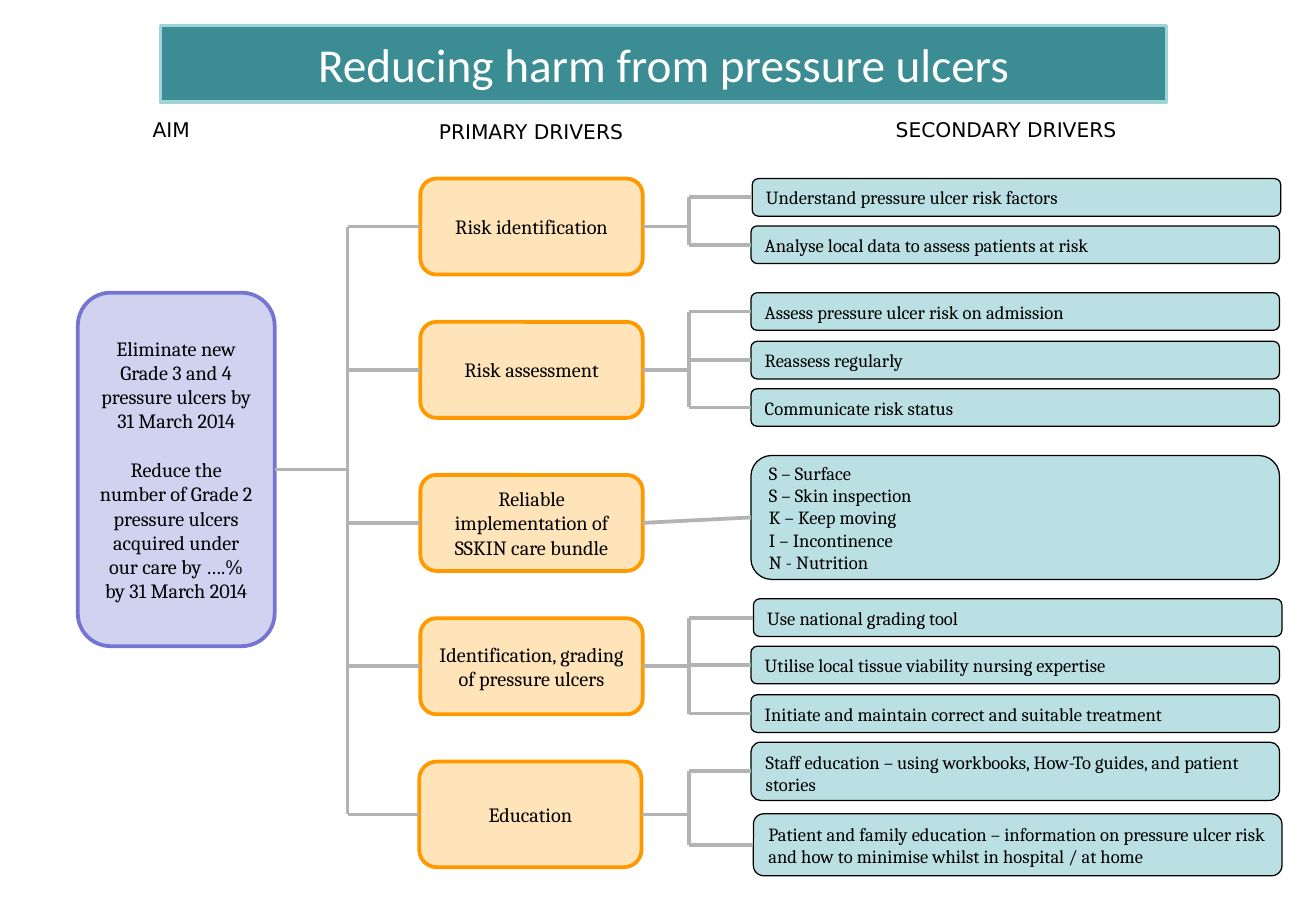
"""Build a driver diagram slide on reducing harm from pressure ulcers."""
import lxml.etree
import pptx
import pptx.dml.color
import pptx.enum.shapes
import pptx.enum.text
import pptx.oxml.ns
import pptx.util

Inches = pptx.util.Inches
Pt = pptx.util.Pt
ALIGN = pptx.enum.text.PP_ALIGN
ANCHOR = pptx.enum.text.MSO_ANCHOR
AUTO_SIZE = pptx.enum.text.MSO_AUTO_SIZE

TITLE = "Reducing harm from pressure ulcers"
HEADINGS = [
    ("AIM", 0.64, 0.92, 1.54),
    ("PRIMARY DRIVERS", 3.28, 0.93, 2.18),
    ("SECONDARY DRIVERS", 6.7, 0.92, 3.16),
]
AIMS = [
    "Eliminate new Grade 3 and 4 pressure ulcers by 31 March 2014",
    "Reduce the number of Grade 2 pressure ulcers acquired under our care by ….% by 31 March 2014",
]
DRIVERS = [
    ("Risk identification", 3.46, 1.47, 0.79, [
        (6.19, 1.47, 0.31, ["Understand pressure ulcer risk factors"]),
        (6.18, 1.86, 0.31, ["Analyse local data to assess patients at risk"]),
    ]),
    ("Risk assessment", 3.46, 2.65, 0.79, [
        (6.18, 2.41, 0.31, ["Assess pressure ulcer risk on admission"]),
        (6.18, 2.81, 0.31, ["Reassess regularly"]),
        (6.18, 3.2, 0.31, ["Communicate risk status"]),
    ]),
    ("Reliable implementation of SSKIN care bundle", 3.46, 3.91, 0.79, [
        (6.18, 3.75, 1.02, ["S – Surface", "S – Skin inspection", "K – Keep moving",
                            "I – Incontinence", "N - Nutrition"]),
    ]),
    ("Identification, grading of pressure ulcers", 3.46, 5.09, 0.79, [
        (6.2, 4.93, 0.31, ["Use national grading tool"]),
        (6.18, 5.32, 0.31, ["Utilise local tissue viability nursing expertise"]),
        (6.18, 5.72, 0.31, ["Initiate and maintain correct and suitable treatment"]),
    ]),
    ("Education", 3.45, 6.27, 0.87, [
        (6.18, 6.11, 0.48,
         ["Staff education – using workbooks, How-To guides, and patient stories"]),
        (6.2, 6.7, 0.51, ["Patient and family education – information on pressure ulcer risk "
                          "and how to minimise whilst in hospital / at home"]),
    ]),
]
COLOURS = {
    "title_fill": "3C8C93", "title_line": "9ED3D7",
    "aim_fill": "D1D1F0", "aim_line": "7575D1",
    "primary_fill": "FFE3B9", "primary_line": "FF9900",
    "secondary_fill": "BBE0E3", "secondary_line": "000000",
    "connector": "B3B3B3", "text": "000000", "title_text": "FFFFFF",
}
PRIMARY_WIDTH, SECONDARY_WIDTH = 1.83, 4.35
AIM_SPINE, DRIVER_SPINE = Inches(2.86), Inches(5.67)


def colour(name):
    return pptx.dml.color.RGBColor.from_string(COLOURS[name])


def paint(shape, role, line_width):
    shape.fill.solid()
    shape.fill.fore_color.rgb = colour(role + "_fill")
    shape.line.color.rgb = colour(role + "_line")
    shape.line.width = Pt(line_width)


def write(shape, lines, size, font, align, anchor, text_colour="text", gap=0):
    frame = shape.text_frame
    frame.word_wrap = True
    frame.vertical_anchor = anchor
    for index, line in enumerate(lines):
        paragraph = frame.add_paragraph() if index else frame.paragraphs[0]
        paragraph.alignment = align
        paragraph.space_before = Pt(gap if index else 0)
        run = paragraph.add_run()
        run.text = line
        run.font.size = Pt(size)
        run.font.name = font
        run.font.color.rgb = colour(text_colour)


def add_box(slide, role, left, top, width, height, line_width):
    box = slide.shapes.add_shape(pptx.enum.shapes.MSO_SHAPE.ROUNDED_RECTANGLE,
                                 Inches(left), Inches(top), Inches(width), Inches(height))
    box.shadow.inherit = False
    paint(box, role, line_width)
    return box


def middle(box):
    return box.top + box.height // 2


def add_line(slide, start, end, begin_box=None, end_box=None):
    line = slide.shapes.add_connector(pptx.enum.shapes.MSO_CONNECTOR.STRAIGHT, *start, *end)
    if begin_box is not None:
        line.begin_connect(begin_box, 3)
    if end_box is not None:
        line.end_connect(end_box, 1)
    line.line.color.rgb = colour("connector")
    line.line.width = Pt(2.25)
    properties = line._element.spPr
    lxml.etree.SubElement(properties, pptx.oxml.ns.qn("a:effectLst"))


def add_bracket(slide, parent, children, spine):
    parent_end = (parent.left + parent.width, middle(parent))
    if len(children) == 1:
        child = children[0]
        add_line(slide, parent_end, (child.left, middle(child)), parent, child)
        return
    add_line(slide, parent_end, (spine, middle(parent)), begin_box=parent)
    add_line(slide, (spine, middle(children[0])), (spine, middle(children[-1])))
    for child in children:
        add_line(slide, (spine, middle(child)), (child.left, middle(child)), end_box=child)


def add_title(slide):
    title = slide.shapes.title
    title.left, title.top = Inches(1.32), Inches(0.21)
    title.width, title.height = Inches(8.28), Inches(0.63)
    geometry = lxml.etree.SubElement(title._element.spPr, pptx.oxml.ns.qn("a:prstGeom"),
                                     prst="roundRect")
    lxml.etree.SubElement(geometry, pptx.oxml.ns.qn("a:avLst"))
    paint(title, "title", 2)
    title.text_frame.auto_size = AUTO_SIZE.NONE
    write(title, [TITLE], 28, "Calibri", ALIGN.CENTER, ANCHOR.MIDDLE, "title_text")


def main():
    presentation = pptx.Presentation()
    presentation.slide_width, presentation.slide_height = Inches(10.83), Inches(7.5)
    slide = presentation.slides.add_slide(presentation.slide_layouts[5])
    add_title(slide)

    for text, left, top, width in HEADINGS:
        heading = slide.shapes.add_textbox(Inches(left), Inches(top), Inches(width), Inches(0.3))
        write(heading, [text], 12, "DejaVu Sans", ALIGN.CENTER, ANCHOR.TOP)
        heading.text_frame.auto_size = AUTO_SIZE.SHAPE_TO_FIT_TEXT

    aim = add_box(slide, "aim", 0.64, 2.41, 1.62, 2.91, 2.25)
    write(aim, AIMS, 12, "Cambria", ALIGN.CENTER, ANCHOR.MIDDLE, gap=14.4)

    primaries = []
    for text, left, top, height, secondaries in DRIVERS:
        primary = add_box(slide, "primary", left, top, PRIMARY_WIDTH, height, 2.25)
        write(primary, [text], 12, "Cambria", ALIGN.CENTER, ANCHOR.MIDDLE)
        primaries.append(primary)
        boxes = []
        for box_left, box_top, box_height, lines in secondaries:
            box = add_box(slide, "secondary", box_left, box_top, SECONDARY_WIDTH, box_height, 0.75)
            anchor = ANCHOR.MIDDLE if len(lines) > 1 else ANCHOR.TOP
            write(box, lines, 11, "Cambria", ALIGN.LEFT, anchor)
            boxes.append(box)
        add_bracket(slide, primary, boxes, DRIVER_SPINE)
    add_bracket(slide, aim, primaries, AIM_SPINE)
    presentation.save("out.pptx")


if __name__ == "__main__":
    main()
